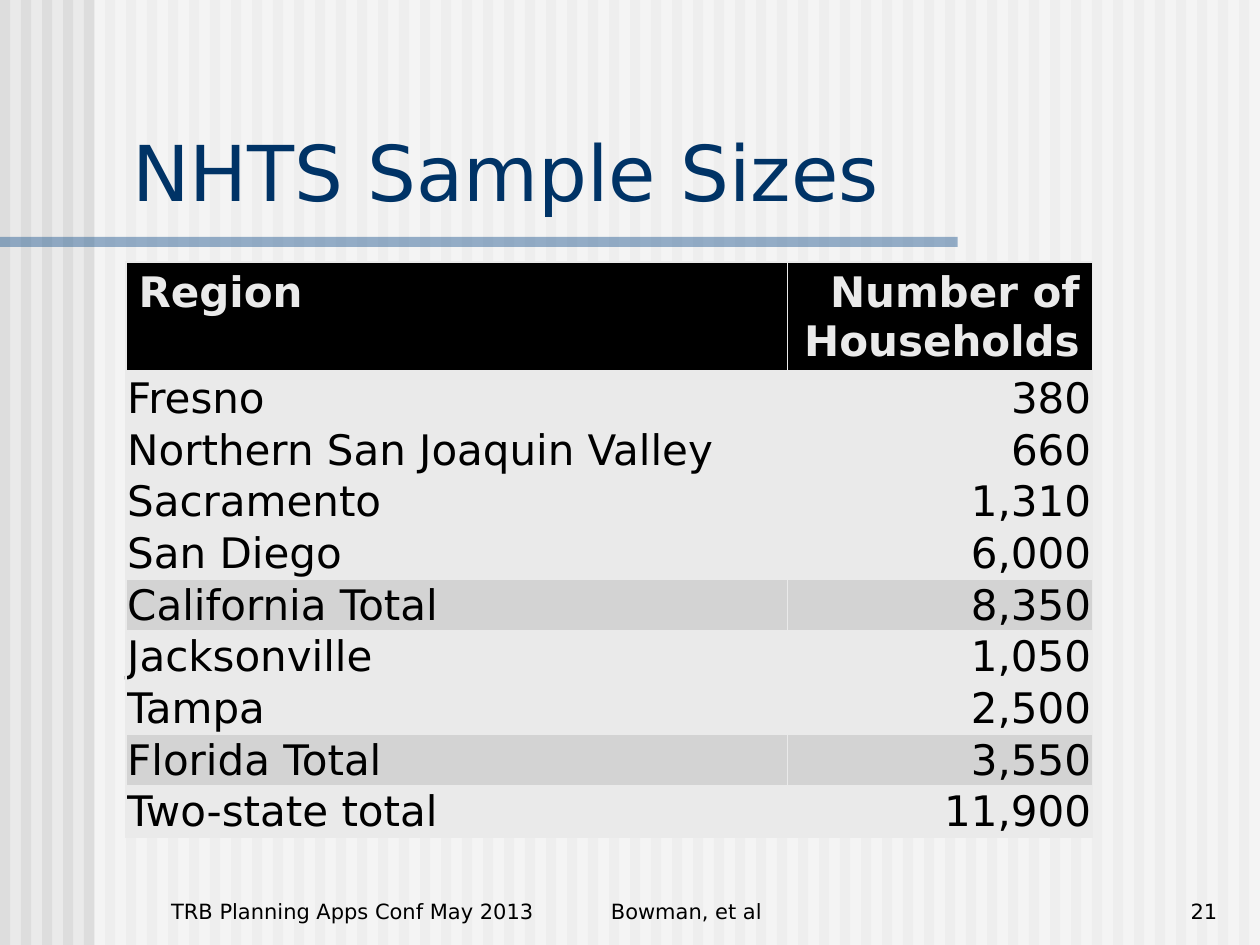
from dataclasses import dataclass

from lxml.etree import SubElement
from pptx import Presentation
from pptx.dml.color import RGBColor
from pptx.enum.shapes import MSO_SHAPE
from pptx.enum.text import MSO_ANCHOR, PP_ALIGN
from pptx.oxml.ns import qn
from pptx.util import Inches, Pt

FONT = "DejaVu Sans"
PALE, BAND, BLACK = "EAEAEA", "D3D3D3", "000000"
LEFT, RIGHT = PP_ALIGN.LEFT, PP_ALIGN.RIGHT


@dataclass
class Bar:
    left: float
    top: float
    width: float
    height: float
    fill: str
    alpha: int = 100


@dataclass
class Note:
    text: str
    left: float
    width: float
    align: PP_ALIGN = LEFT


@dataclass
class Row:
    region: str
    count: str
    fill: str = PALE


STRIPES = [Bar(i / 6, 0, 0.08, 7.5, "DDDDDD") for i in range(60)]
VEIL = Bar(0.75, 0, 9.25, 7.5, "FFFFFF", 50)
RULE = Bar(0, 1.88, 7.6, 0.08, "336699", 50)
ROWS = [
    Row("Region", "Number of Households", BLACK),
    Row("Fresno", "380"),
    Row("Northern San Joaquin Valley", "660"),
    Row("Sacramento", "1,310"),
    Row("San Diego", "6,000"),
    Row("California Total", "8,350", BAND),
    Row("Jacksonville", "1,050"),
    Row("Tampa", "2,500"),
    Row("Florida Total", "3,550", BAND),
    Row("Two-state total", "11,900"),
]
NOTES = [
    Note("TRB Planning Apps Conf May 2013", 1.26, 3.49),
    Note("Bowman, et al", 4.75, 4.08),
    Note("21", 8.83, 0.93, RIGHT),
]


def paint(fill, color: str) -> None:
    fill.solid()
    fill.fore_color.rgb = RGBColor.from_string(color)


def write(frame, text: str, size: float, color: str,
          align: PP_ALIGN = LEFT, bold: bool = False) -> None:
    frame.word_wrap = True
    para = frame.paragraphs[0]
    para.alignment = align
    run = para.add_run()
    run.text = text
    look = {"name": FONT, "size": Pt(size), "bold": bold}
    for key, value in look.items():
        setattr(run.font, key, value)
    paint(run.font.fill, color)


def draw_bar(slide, bar: Bar) -> None:
    box = map(Inches, (bar.left, bar.top, bar.width, bar.height))
    shape = slide.shapes.add_shape(MSO_SHAPE.RECTANGLE, *box)
    shape.shadow.inherit = False
    shape.line.fill.background()
    paint(shape.fill, bar.fill)
    if bar.alpha < 100:
        color = shape.fill._xPr.find(".//" + qn("a:srgbClr"))
        SubElement(color, qn("a:alpha"), val=str(bar.alpha * 1000))


def draw_title(slide, text: str) -> None:
    title = slide.shapes.title
    place = {"left": 0.95, "top": 0.93, "width": 8.93, "height": 0.84}
    for key, value in place.items():
        setattr(title, key, Inches(value))
    title.text_frame.vertical_anchor = MSO_ANCHOR.BOTTOM
    write(title.text_frame, text, 44, "003366")
    # Bring the title in front of the stripes
    title.element.getparent().append(title.element)


def edge(cell, head: bool) -> None:
    """Give the cell thin pale borders, with a thick one under the header."""
    props = cell._tc.get_or_add_tcPr()
    for i, side in enumerate(("lnL", "lnR", "lnT", "lnB")):
        width = Pt(3 if head and side == "lnB" else 1)
        line = props.makeelement(qn("a:" + side), {"w": str(width)})
        fill = SubElement(line, qn("a:solidFill"))
        SubElement(fill, qn("a:srgbClr"), val=PALE)
        props.insert(i, line)


def draw_table(slide, rows: list[Row]) -> None:
    box = map(Inches, (1, 2.08, 7.67, 4.55))
    table = slide.shapes.add_table(len(rows), 2, *box).table
    for col, width in zip(table.columns, (5.25, 2.42)):
        col.width = Inches(width)
    tight = {"margin_left": Inches(0.01), "margin_right": Inches(0.01),
             "margin_top": Inches(0.01), "margin_bottom": 0,
             "vertical_anchor": MSO_ANCHOR.MIDDLE}
    for i, row in enumerate(rows):
        head = i == 0
        table.rows[i].height = Inches(0.86 if head else 0.41)
        pairs = ((row.region, LEFT), (row.count, RIGHT))
        for cell, (text, align) in zip(table.rows[i].cells, pairs):
            paint(cell.fill, row.fill)
            edge(cell, head)
            write(cell.text_frame, text, 24, PALE if head else BLACK,
                  align, head)
            if not head:
                for key, value in tight.items():
                    setattr(cell, key, value)


def draw_note(slide, note: Note) -> None:
    box = map(Inches, (note.left, 6.88, note.width, 0.5))
    frame = slide.shapes.add_textbox(*box).text_frame
    frame.vertical_anchor = MSO_ANCHOR.BOTTOM
    write(frame, note.text, 12, BLACK, note.align)


def main() -> None:
    deck = Presentation()
    deck.slide_width, deck.slide_height = Inches(10), Inches(7.5)
    slide = deck.slides.add_slide(deck.slide_layouts[5])
    paint(slide.background.fill, PALE)
    for bar in [*STRIPES, VEIL, RULE]:
        draw_bar(slide, bar)
    draw_title(slide, "NHTS Sample Sizes")
    draw_table(slide, ROWS)
    for note in NOTES:
        draw_note(slide, note)
    deck.save("out.pptx")


if __name__ == "__main__":
    main()
